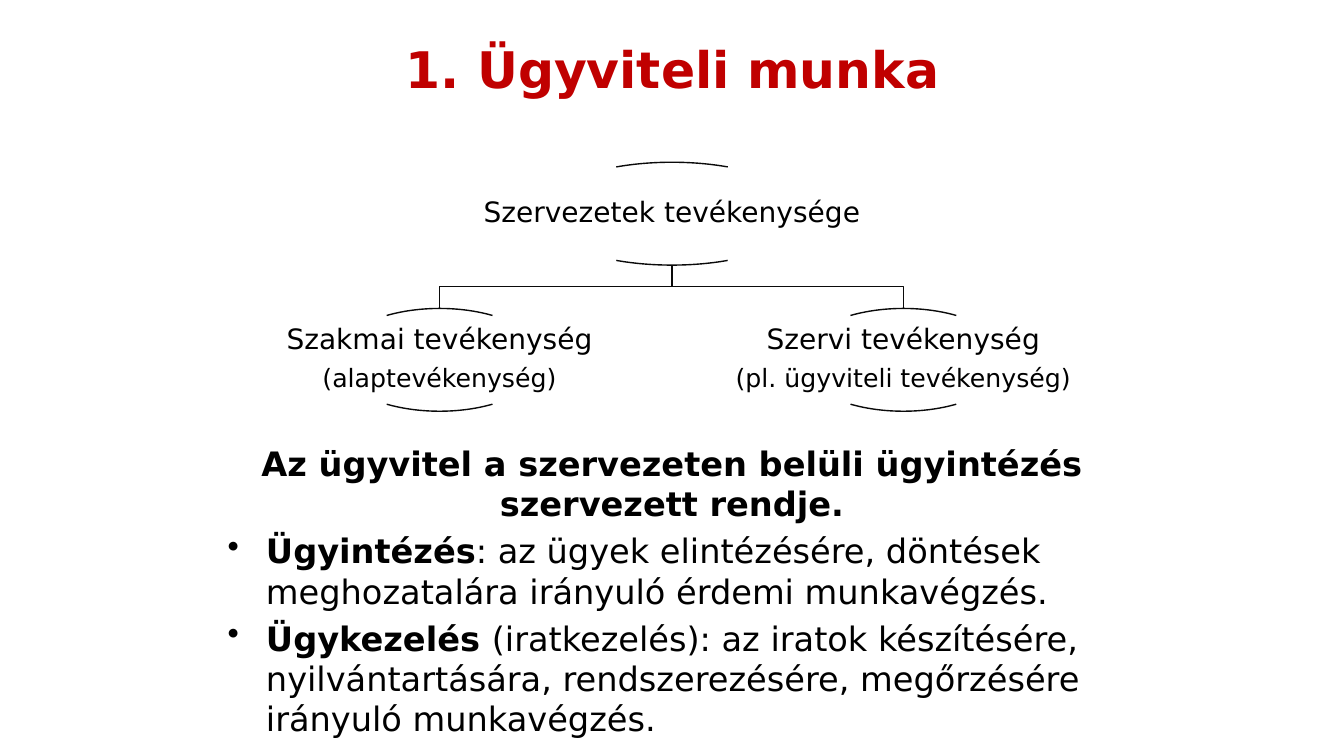
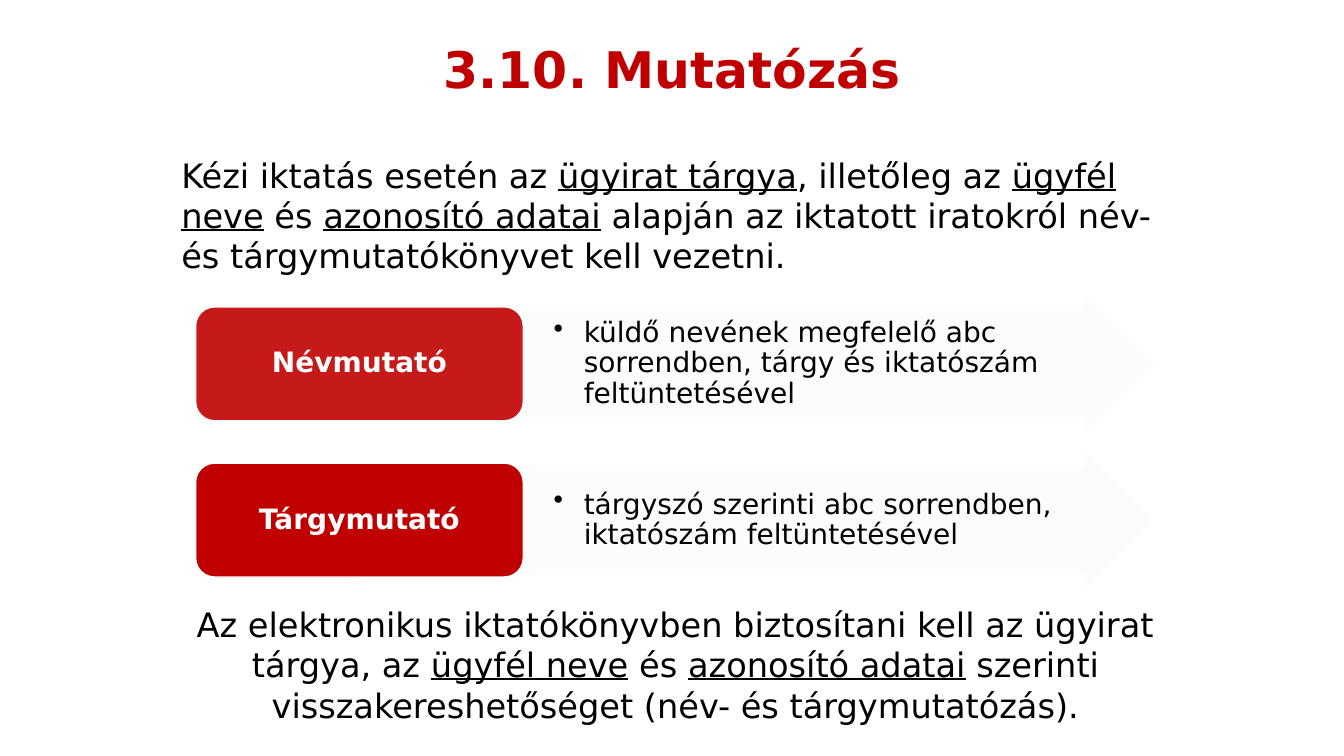
"""Build two slides on office administration and record indexing."""
from lxml.etree import SubElement
from pptx import Presentation
from pptx.dml.color import RGBColor
from pptx.enum.shapes import MSO_SHAPE
from pptx.enum.text import MSO_ANCHOR, PP_ALIGN
from pptx.oxml.ns import qn
from pptx.util import Pt

PX = 9144
FONT = "DejaVu Sans"
RED = RGBColor(0xC0, 0x00, 0x00)
BLACK = RGBColor(0x00, 0x00, 0x00)
WHITE = RGBColor(0xFF, 0xFF, 0xFF)
LINE = RGBColor(0x0A, 0x0A, 0x0A)
PALE = RGBColor(0xFC, 0xFC, 0xFC)

BODY_INSETS = (10, 5)
TIGHT_INSETS = (1, 1)
TITLE_BOX = (167, 0, 1000, 143)
BODY_INDENT = (88, 38)
ROW_INDENT = (59, 30)

WORK_TITLE = "1. Ügyviteli munka"
ROOT = ((534, 161, 265), [("Szervezetek tevékenysége", 20)])
CHILDREN = [
    ((332, 306, 208), [("Szakmai tevékenység", 20), ("(alaptevékenység)", 18)]),
    ((792, 306, 208), [("Szervi tevékenység", 20), ("(pl. ügyviteli tevékenység)", 18)]),
]
ARC_HEIGHT = 102
ARC_ANGLES = [(132, 192), (24, 84)]
DEFINITION_BOX = (166, 422, 1001, 328)
DEFINITION = [("Az ügyvitel a szervezeten belüli ügyintézés szervezett rendje.", "b")]
TERMS = [
    [("Ügyintézés", "b"),
     (": az ügyek elintézésére, döntések meghozatalára irányuló érdemi munkavégzés.", "")],
    [("Ügykezelés ", "b"),
     ("(iratkezelés): az iratok készítésére, nyilvántartására, rendszerezésére, "
      "megőrzésére irányuló munkavégzés.", "")],
]

INDEX_TITLE = "3.10. Mutatózás"
INDEX_TEXTS = [
    ((170, 141, 997, 145), PP_ALIGN.LEFT, [
        ("Kézi iktatás esetén az ", ""), ("ügyirat tárgya", "u"),
        (", illetőleg az ", ""), ("ügyfél neve", "u"), (" és ", ""),
        ("azonosító adatai", "u"),
        (" alapján az iktatott iratokról név- és tárgymutatókönyvet kell vezetni.", "")]),
    ((170, 580, 1000, 158), PP_ALIGN.CENTER, [
        ("Az elektronikus iktatókönyvben biztosítani kell az ügyirat tárgya, az ", ""),
        ("ügyfél neve", "u"), (" és ", ""), ("azonosító adatai", "u"),
        (" szerinti visszakereshetőséget (név- és tárgymutatózás).", "")]),
]
INDEX_ROWS = [
    ("Névmutató", 90,
     "küldő nevének megfelelő abc sorrendben, tárgy és iktatószám feltüntetésével"),
    ("Tárgymutató", 100,
     "tárgyszó szerinti abc sorrendben, iktatószám feltüntetésével"),
]
ROW_TOP, ROW_PITCH, ROW_HEIGHT = 289, 155, 144
LABEL_LEFT, LABEL_WIDTH, LABEL_HEIGHT = 194, 325, 113
ARROW_WIDTH = 627


def emu(*lengths):
    return [round(length * PX) for length in lengths]


def prepare_frame(shape, insets):
    frame = shape.text_frame
    frame.word_wrap = True
    frame.vertical_anchor = MSO_ANCHOR.MIDDLE
    side, edge = emu(*insets)
    frame.margin_left = frame.margin_right = side
    frame.margin_top = frame.margin_bottom = edge
    return frame


def add_text_box(page, box, insets=BODY_INSETS):
    return prepare_frame(page.shapes.add_textbox(*emu(*box)), insets)


def write(para, spans, size, color=BLACK, align=PP_ALIGN.CENTER,
          spacing=None, before=0, indent=None):
    if indent:
        left, hanging = emu(*indent)
        properties = para._p.get_or_add_pPr()
        properties.set("marL", str(left))
        properties.set("indent", str(-hanging))
        SubElement(properties, qn("a:buChar")).set("char", "•")
    para.alignment = align
    para.line_spacing = spacing
    para.space_before = Pt(before)
    for text, style in spans:
        span = para.add_run()
        span.text = text
        span.font.name = FONT
        span.font.size = Pt(size)
        span.font.color.rgb = color
        span.font.bold = style == "b"
        span.font.underline = style == "u"


def add_page(deck, title):
    page = deck.slides.add_slide(deck.slide_layouts[6])
    frame = add_text_box(page, TITLE_BOX)
    write(frame.paragraphs[0], [(title, "b")], 36, RED, spacing=0.9)
    return page


def style_outline(shape, color):
    shape.shadow.inherit = False
    shape.line.color.rgb = color
    shape.line.width = Pt(1)


def add_filled(page, kind, box, color, opacity, insets):
    shape = page.shapes.add_shape(kind, *emu(*box))
    style_outline(shape, WHITE)
    shape.fill.solid()
    shape.fill.fore_color.rgb = color
    if opacity < 100:
        tone = shape._element.spPr.find(qn("a:solidFill"))[0]
        SubElement(tone, qn("a:alpha")).set("val", str(opacity * 1000))
    return shape, prepare_frame(shape, insets)


def add_branch(page, parent, child):
    start_x, start_y = parent[0] + parent[2] / 2, parent[1] + ARC_HEIGHT
    end_x, end_y = child[0] + child[2] / 2, child[1]
    middle = (start_y + end_y) / 2
    builder = page.shapes.build_freeform(*emu(start_x, start_y))
    corners = [(start_x, middle), (end_x, middle), (end_x, end_y)]
    builder.add_line_segments([emu(*corner) for corner in corners], close=False)
    branch = builder.convert_to_shape()
    branch.fill.background()
    style_outline(branch, LINE)


def add_node(page, place, lines):
    left, top, width = place
    for angles in ARC_ANGLES:
        arc = page.shapes.add_shape(MSO_SHAPE.ARC, *emu(left, top, width, ARC_HEIGHT))
        arc.adjustments[0], arc.adjustments[1] = angles
        arc.fill.background()
        style_outline(arc, LINE)
    frame = add_text_box(page, (left - width / 2, top + 18, width * 2, 65), TIGHT_INSETS)
    for number, (text, size) in enumerate(lines):
        para = frame.add_paragraph() if number else frame.paragraphs[0]
        write(para, [(text, "")], size, spacing=0.9, before=7 if number else 0)


def build_work_page(deck):
    page = add_page(deck, WORK_TITLE)
    frame = add_text_box(page, DEFINITION_BOX)
    write(frame.paragraphs[0], DEFINITION, 24)
    for term in TERMS:
        write(frame.add_paragraph(), term, 24, align=PP_ALIGN.LEFT,
              before=4.8, indent=BODY_INDENT)
    for place, _ in CHILDREN:
        add_branch(page, ROOT[0], place)
    for place, lines in [ROOT, *CHILDREN]:
        add_node(page, place, lines)


def build_index_page(deck):
    page = add_page(deck, INDEX_TITLE)
    for box, align, spans in INDEX_TEXTS:
        write(add_text_box(page, box).paragraphs[0], spans, 24, align=align)
    for number, (label, opacity, detail) in enumerate(INDEX_ROWS):
        top = ROW_TOP + number * ROW_PITCH
        arrow_box = (LABEL_LEFT + LABEL_WIDTH, top, ARROW_WIDTH, ROW_HEIGHT)
        arrow, frame = add_filled(page, MSO_SHAPE.RIGHT_ARROW, arrow_box, PALE, 90, TIGHT_INSETS)
        arrow.adjustments[0] = 0.75
        write(frame.paragraphs[0], [(detail, "")], 20, align=PP_ALIGN.LEFT,
              spacing=0.9, indent=ROW_INDENT)
        label_top = top + (ROW_HEIGHT - LABEL_HEIGHT) / 2
        label_box = (LABEL_LEFT, label_top, LABEL_WIDTH, LABEL_HEIGHT)
        _, frame = add_filled(page, MSO_SHAPE.ROUNDED_RECTANGLE, label_box, RED, opacity, (8, 4))
        write(frame.paragraphs[0], [(label, "b")], 20, WHITE, spacing=0.9)


def main():
    deck = Presentation()
    deck.slide_width, deck.slide_height = emu(1333, 750)
    build_work_page(deck)
    build_index_page(deck)
    deck.save("out.pptx")


if __name__ == "__main__":
    main()
